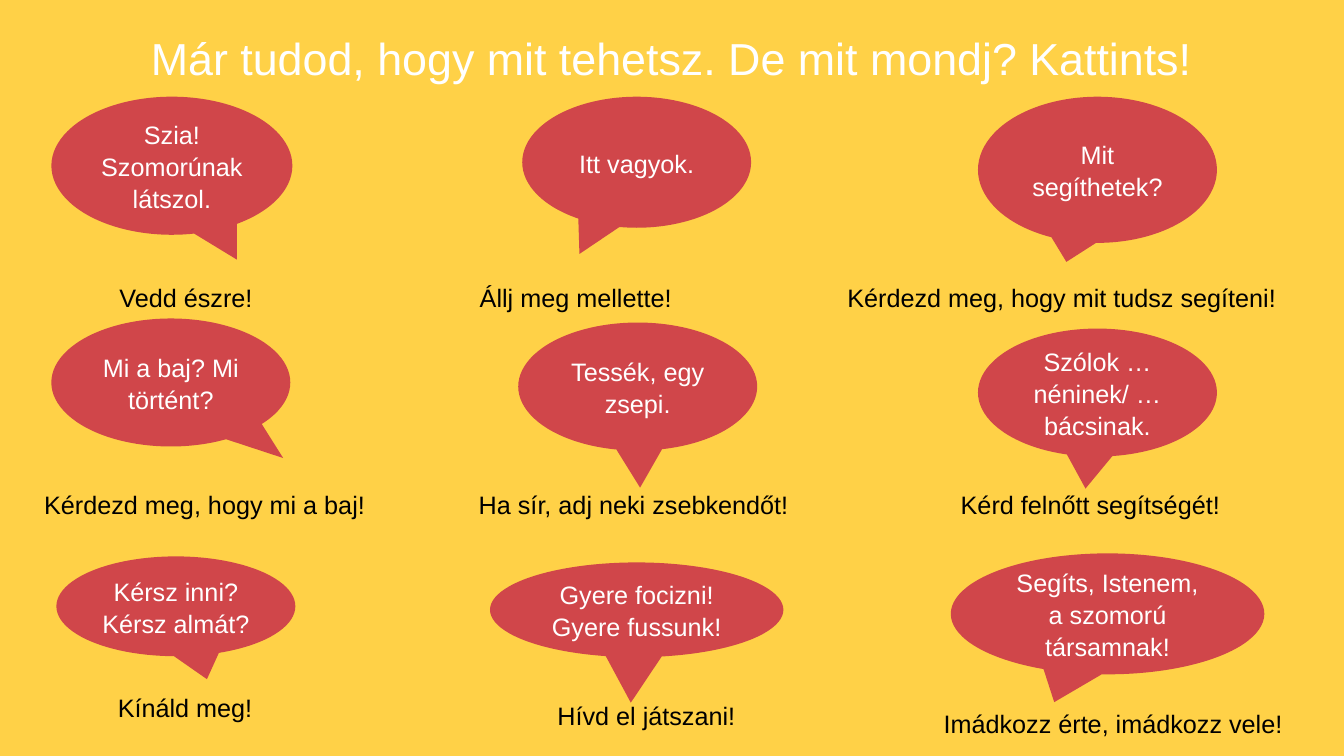
from pptx import Presentation
from pptx.dml.color import RGBColor
from pptx.enum.shapes import MSO_SHAPE
from pptx.enum.text import MSO_ANCHOR, MSO_AUTO_SIZE, PP_ALIGN
from pptx.util import Emu, Pt

PX = 9144  # 100 px to the inch
COLORS = {"background": "FFD147", "bubble": "D0464A", "light": "FFFFFF", "dark": "000000"}
CENTER, LEFT = PP_ALIGN.CENTER, PP_ALIGN.LEFT
CAPTION_HEIGHT = 47


def box(*lengths):
    return [Emu(length * PX) for length in lengths]


def write(shape, text, size, color, align, anchor):
    frame = shape.text_frame
    frame.text = text
    frame.word_wrap = True
    frame.auto_size = MSO_AUTO_SIZE.NONE
    frame.vertical_anchor = anchor
    for paragraph in frame.paragraphs:
        paragraph.alignment = align
        paragraph.line_spacing = 1.05
        paragraph.space_before = Pt(0)
        for run in paragraph.runs:
            run.font.name = "Arial"
            run.font.size = Pt(size)
            run.font.color.rgb = RGBColor.from_string(COLORS[color])


presentation = Presentation()
presentation.slide_width, presentation.slide_height = box(1333, 750)
slide = presentation.slides.add_slide(presentation.slide_layouts[5])
slide.background.fill.solid()
slide.background.fill.fore_color.rgb = RGBColor.from_string(COLORS["background"])

# Title
title = slide.shapes.title
title.left, title.top, title.width, title.height = box(0, 23, 1333, 97)
write(title, "Már tudod, hogy mit tehetsz. De mit mondj? Kattints!",
      32, "light", CENTER, MSO_ANCHOR.TOP)

# Each piece of advice: caption, its left, top, width and alignment,
# then what to say, the bubble's box and the offset of its tip
advice = [
    ("Vedd észre!", 51, 274, 267, CENTER,
     "Szia! Szomorúnak látszol.", (51, 96, 239, 137), (0.27, 0.68)),
    ("Állj meg mellette!", 433, 274, 276, CENTER,
     "Itt vagyok.", (518, 96, 227, 130), (-0.25, 0.7)),
    ("Kérdezd meg, hogy mit tudsz segíteni!", 824, 274, 458, CENTER,
     "Mit segíthetek?", (970, 96, 237, 145), (-0.13, 0.63)),
    ("Kérdezd meg, hogy mi a baj!", 34, 479, 343, LEFT,
     "Mi a baj? Mi történt?", (51, 316, 237, 127), (0.47, 0.59)),
    ("Ha sír, adj neki zsebkendőt!", 465, 479, 390, LEFT,
     "Tessék, egy zsepi.", (514, 320, 237, 127), (0.01, 0.79)),
    ("Kérd felnőtt segítségét!", 943, 479, 291, LEFT,
     "Szólok … néninek/ … bácsinak.", (970, 326, 237, 127), (-0.05, 0.75)),
    ("Kínáld meg!", 107, 680, 156, LEFT,
     "Kérsz inni? Kérsz almát?", (56, 552, 237, 99), (0.13, 0.73)),
    ("Hívd el játszani!", 543, 688, 201, LEFT,
     "Gyere focizni!\nGyere fussunk!", (486, 558, 291, 94), (-0.02, 0.98)),
    ("Imádkozz érte, imádkozz vele!", 926, 696, 399, LEFT,
     "Segíts, Istenem, a szomorú társamnak!", (943, 549, 311, 120), (-0.17, 0.73)),
]

for caption_text, left, top, width, align, speech, bubble_box, tip in advice:
    # Caption
    caption = slide.shapes.add_textbox(*box(left, top, width, CAPTION_HEIGHT))
    write(caption, caption_text, 18, "dark", align, MSO_ANCHOR.TOP)

    # Speech bubble
    bubble = slide.shapes.add_shape(MSO_SHAPE.OVAL_CALLOUT, *box(*bubble_box))
    bubble.adjustments[0], bubble.adjustments[1] = tip
    bubble.shadow.inherit = False
    bubble.fill.solid()
    bubble.fill.fore_color.rgb = RGBColor.from_string(COLORS["bubble"])
    bubble.line.fill.background()
    write(bubble, speech, 18, "light", CENTER, MSO_ANCHOR.MIDDLE)

presentation.save("out.pptx")
